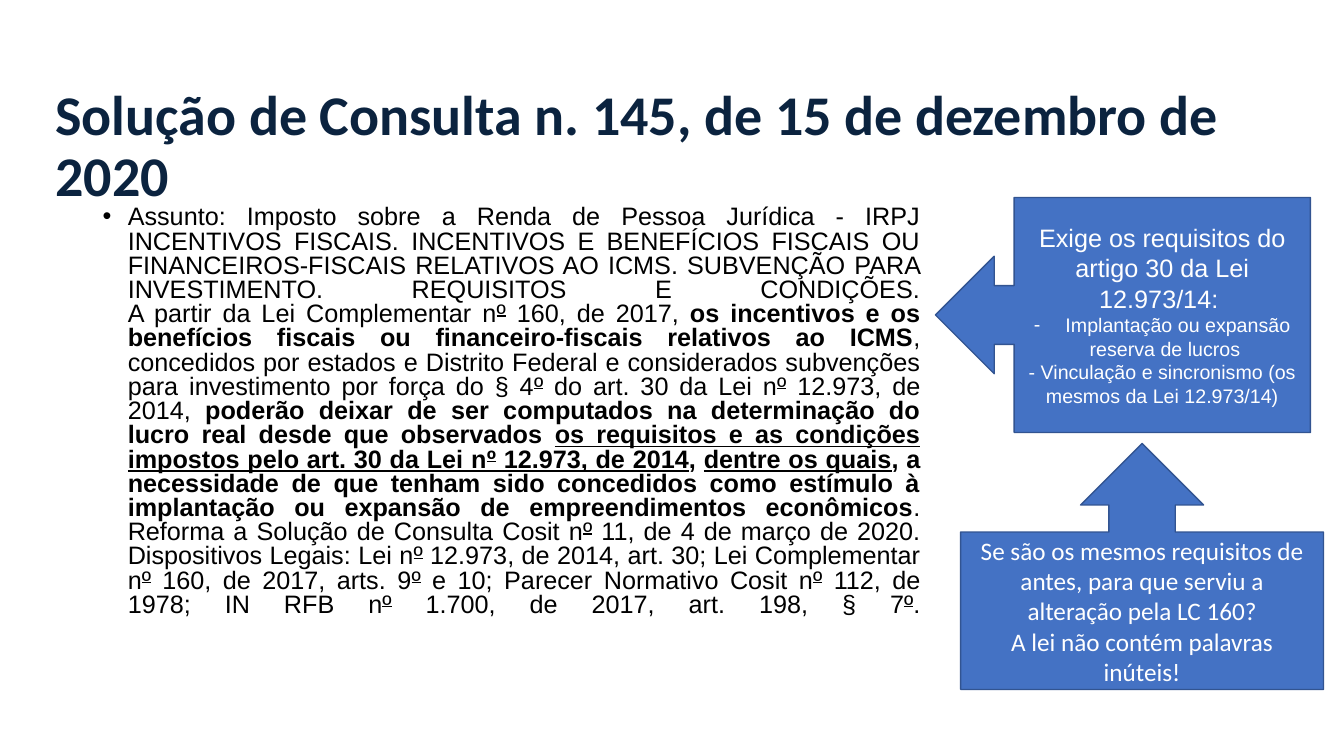
import pptx
import pptx.util
import pptx.dml.color
import pptx.enum.shapes
import pptx.enum.text
import lxml.etree

Pt = pptx.util.Pt
Align = pptx.enum.text.PP_ALIGN
Anchor = pptx.enum.text.MSO_ANCHOR
Kind = pptx.enum.shapes.MSO_SHAPE


def color(code):
    return pptx.dml.color.RGBColor.from_string(code)


class Deck:
    navy, ink, white, blue, edge = "0B233F", "000000", "FFFFFF", "4472C4", "325491"

    def __init__(self):
        self.file = pptx.Presentation()
        self.file.slide_width, self.file.slide_height = Pt(960), Pt(540)
        self.slide = self.file.slides.add_slide(self.file.slide_layouts[5])

    def style(self, para, face, size, code, align, bold=False):
        para.alignment = align
        font = para.font
        font.name, font.size, font.bold = face, Pt(size), bold
        font.color.rgb = color(code)

    def bullet(self, para, mark, indent):
        props = para._p.get_or_add_pPr()
        props.set("marL", str(Pt(indent)))
        props.set("indent", str(-Pt(indent)))
        tag = "{http://schemas.openxmlformats.org/drawingml/2006/main}"
        lxml.etree.SubElement(props, tag + "buFont", typeface="Arial")
        lxml.etree.SubElement(props, tag + "buChar", char=mark)

    def title(self, box, text):
        shape = self.slide.shapes.title
        shape.left, shape.top, shape.width, shape.height = map(Pt, box)
        frame = shape.text_frame
        frame.text = text
        frame.word_wrap = True
        frame.auto_size = pptx.enum.text.MSO_AUTO_SIZE.NONE
        frame.vertical_anchor = Anchor.MIDDLE
        para = frame.paragraphs[0]
        para.line_spacing = 0.9
        self.style(para, "Calibri", 40, self.navy, Align.LEFT, True)

    def run(self, para, text, mode):
        for i, part in enumerate(text.split("º")):
            for piece, strike in (("º" if i else "", True), (part, False)):
                if not piece:
                    continue
                run = para.add_run()
                run.text = piece
                if "b" in mode:
                    run.font.bold = True
                if "u" in mode:
                    run.font.underline = True
                if strike:
                    run._r.get_or_add_rPr().set("strike", "sngStrike")

    def body(self, box, parts):
        frame = self.slide.shapes.add_textbox(*map(Pt, box)).text_frame
        frame.word_wrap = True
        para = frame.paragraphs[0]
        self.bullet(para, "•", 18)
        para.line_spacing = 0.8
        self.style(para, "Arial", 18, self.ink, Align.JUSTIFY)
        for mode, text in parts:
            for i, line in enumerate(text.split("\n")):
                if i:
                    para.add_line_break()
                self.run(para, line, mode)

    def callout(self, kind, box, adjust, face, lines):
        shape = self.slide.shapes.add_shape(kind, *map(Pt, box))
        shape.shadow.inherit = False
        for i, value in enumerate(adjust):
            shape.adjustments[i] = value
        shape.fill.solid()
        shape.fill.fore_color.rgb = color(self.blue)
        shape.line.color.rgb = color(self.edge)
        shape.line.width = Pt(1)
        frame = shape.text_frame
        frame.word_wrap = True
        frame.vertical_anchor = Anchor.MIDDLE
        for i, (size, mark, text) in enumerate(lines):
            para = frame.add_paragraph() if i else frame.paragraphs[0]
            para.text = text
            if mark:
                self.bullet(para, mark, 22.5)
            self.style(para, face, size, self.white, Align.CENTER)


def main():
    deck = Deck()
    deck.title((32.4, 53.3, 907.2, 104.4),
               "Solução de Consulta n. 145, de 15 de dezembro de 2020")
    deck.body((66.2, 144, 598.3, 337), [
        ("", "Assunto: Imposto sobre a Renda de Pessoa Jurídica - IRPJ\n"
             "INCENTIVOS FISCAIS. INCENTIVOS E BENEFÍCIOS FISCAIS OU "
             "FINANCEIROS-FISCAIS RELATIVOS AO ICMS. SUBVENÇÃO PARA "
             "INVESTIMENTO. REQUISITOS E CONDIÇÕES.\n"
             "A partir da Lei Complementar nº 160, de 2017, "),
        ("b", "os incentivos e os benefícios fiscais ou "
              "financeiro-fiscais relativos ao ICMS"),
        ("", ", concedidos por estados e Distrito Federal e considerados "
             "subvenções para investimento por força do § 4º do art. 30 "
             "da Lei nº 12.973, de 2014, "),
        ("b", "poderão deixar de ser computados na determinação do lucro "
              "real desde que observados "),
        ("bu", "os requisitos e as condições impostos pelo art. 30 da "
               "Lei nº 12.973, de 2014"),
        ("b", ", "),
        ("bu", "dentre os quais"),
        ("b", ", a necessidade de que tenham sido concedidos como estímulo "
              "à implantação ou expansão de empreendimentos econômicos"),
        ("", ".\nReforma a Solução de Consulta Cosit nº 11, de 4 de março "
             "de 2020.\nDispositivos Legais: Lei nº 12.973, de 2014, "
             "art. 30; Lei Complementar nº 160, de 2017, arts. 9º e 10; "
             "Parecer Normativo Cosit nº 112, de 1978; IN RFB nº 1.700, "
             "de 2017, art. 198, § 7º.\n"),
    ])
    deck.callout(Kind.LEFT_ARROW_CALLOUT, (668.2, 141.1, 267.8, 167.8),
                 (0.25, 0.25, 0.25, 0.79), "Arial", [
        (18, "", "Exige os requisitos do artigo 30 da Lei 12.973/14: "),
        (14, "-", "Implantação ou expansão"),
        (14, "", " reserva de lucros"),
        (14, "", "- Vinculação e sincronismo (os mesmos da Lei 12.973/14)"),
    ])
    deck.callout(Kind.UP_ARROW_CALLOUT, (686.2, 316.8, 259.2, 175.7),
                 (0.27, 0.25, 0.25, 0.64), "Calibri", [
        (18, "", "Se são os mesmos requisitos de antes, para que serviu "
                 "a alteração pela LC 160?"),
        (18, "", "A lei não contém palavras inúteis!"),
    ])
    deck.file.save("out.pptx")


if __name__ == "__main__":
    main()
